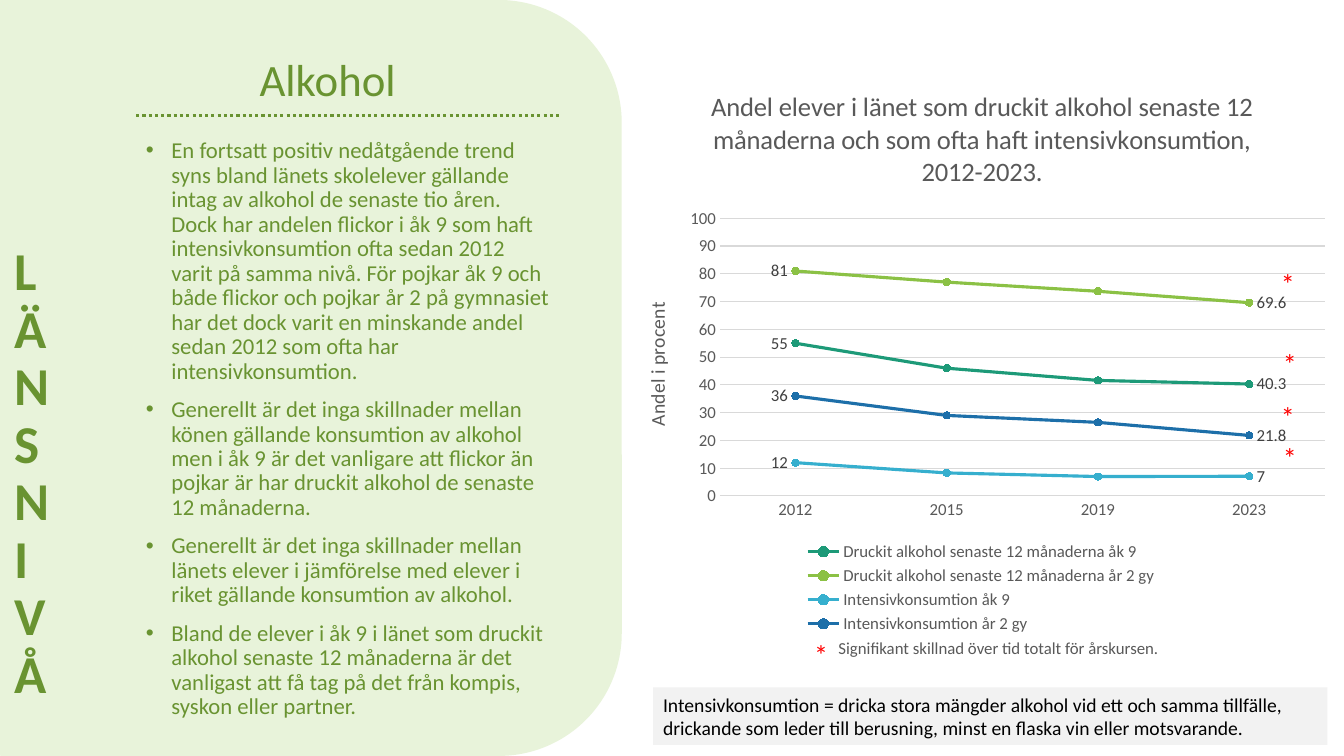
from dataclasses import dataclass

from lxml import etree
from pptx import Presentation
from pptx.chart import data as chart_data
from pptx.dml import color
from pptx.enum import chart as ch, dml, shapes, text
from pptx.oxml import ns
from pptx.util import Cm, Pt


@dataclass(frozen=True)
class Theme:
    font: str = "Calibri"
    green: str = "699331"
    pale_green: str = "E8F3DA"
    grey: str = "595959"
    label_grey: str = "404040"
    grid_grey: str = "D9D9D9"
    pale_grey: str = "F2F2F2"
    black: str = "000000"
    red: str = "FF0000"
    level: float = 38
    heading: float = 32
    star: float = 20
    chart_title: float = 19
    body: float = 16.2
    definition: float = 14
    axis_title: float = 14
    small: float = 12


@dataclass(frozen=True)
class Box:
    left: float
    top: float
    width: float = 0
    height: float = 0

    def cm(self) -> tuple:
        return Cm(self.left), Cm(self.top), Cm(self.width), Cm(self.height)


@dataclass(frozen=True)
class Trend:
    name: str
    values: tuple
    colour: str
    label_format: str = "General"


THEME = Theme()
CHART = Box(15.72, 1.68, 18.01, 14.4)
TRENDS = (
    Trend("Druckit alkohol senaste 12 månaderna åk 9", (55, 46, 41.6, 40.3), "1D9A78"),
    Trend("Druckit alkohol senaste 12 månaderna år 2 gy", (81, 77, 73.7, 69.6), "8BC145"),
    Trend("Intensivkonsumtion åk 9", (12, 8.3, 7, 7.1), "36AFCE", "0"),
    Trend("Intensivkonsumtion år 2 gy", (36, 29, 26.5, 21.8), "1D6FA9"),
)
FINDINGS = (
    "En fortsatt positiv nedåtgående trend syns bland länets skolelever gällande intag av alkohol "
    "de senaste tio åren. Dock har andelen flickor i åk 9 som haft intensivkonsumtion ofta sedan 2012 "
    "varit på samma nivå. För pojkar åk 9 och både flickor och pojkar år 2 på gymnasiet har det dock "
    "varit en minskande andel sedan 2012 som ofta har intensivkonsumtion.",
    "Generellt är det inga skillnader mellan könen gällande konsumtion av alkohol men i åk 9 är det "
    "vanligare att flickor än pojkar är har druckit alkohol de senaste 12 månaderna.",
    "Generellt är det inga skillnader mellan länets elever i jämförelse med elever i riket gällande "
    "konsumtion av alkohol.",
    "Bland de elever i åk 9 i länet som druckit alkohol senaste 12 månaderna är det vanligast att få "
    "tag på det från kompis, syskon eller partner.",
)
STARS = (
    Box(32.03, 6.58, 1.22, 1.75),
    Box(32.08, 8.61, 1.22, 1.75),
    Box(32.03, 9.93, 1.22, 1.75),
    Box(32.08, 10.97, 1.22, 1.75),
    Box(20.27, 15.93, 1.22, 1.45),
)


def rgb(value: str) -> color.RGBColor:
    return color.RGBColor.from_string(value)


def style(font, size: float, colour: str, bold: bool = False) -> None:
    font.name = THEME.font
    font.size = Pt(size)
    font.bold = bold
    font.color.rgb = rgb(colour)


def write(frame, words: tuple, size: float, colour: str, bold: bool = False) -> None:
    frame.word_wrap = True
    frame.text = "\n".join(words)
    for paragraph in frame.paragraphs:
        style(paragraph.font, size, colour, bold)


def add_text(slide, box: Box, words: tuple, size: float, colour: str, bold: bool = False):
    frame = slide.shapes.add_textbox(*box.cm()).text_frame
    write(frame, words, size, colour, bold)
    return frame


def add_panel(slide, preset, box: Box, fill: str):
    panel = slide.shapes.add_shape(preset, *box.cm())
    panel.shadow.inherit = False
    panel.fill.solid()
    panel.fill.fore_color.rgb = rgb(fill)
    panel.line.fill.background()
    return panel


def add_bullet(paragraph) -> None:
    paragraph.line_spacing = 0.9
    paragraph.space_before = Pt(10)
    properties = paragraph._p.get_or_add_pPr()
    properties.set("marL", str(Cm(0.64)))
    properties.set("indent", str(Cm(-0.64)))
    etree.SubElement(properties, ns.qn("a:buFont")).set("typeface", "Arial")
    etree.SubElement(properties, ns.qn("a:buChar")).set("char", "•")


def place(element, box: Box, inner: bool = False) -> None:
    layout = element.find(ns.qn("c:layout"))
    if layout is None:
        layout = etree.Element(ns.qn("c:layout"))
        before = [element.find(ns.qn("c:" + tag)) for tag in ("tx", "legendPos")]
        element.insert(1 if any(part is not None for part in before) else 0, layout)
    manual = etree.SubElement(layout, ns.qn("c:manualLayout"))
    settings = [("layoutTarget", "inner")] if inner else []
    settings += [("xMode", "edge"), ("yMode", "edge")]
    settings += [("x", box.left / CHART.width), ("y", box.top / CHART.height)]
    if box.width:
        settings += [("w", box.width / CHART.width), ("h", box.height / CHART.height)]
    for tag, value in settings:
        etree.SubElement(manual, ns.qn("c:" + tag)).set("val", str(value))


def draw_trend(series, trend: Trend) -> None:
    series.smooth = False
    series.format.line.color.rgb = rgb(trend.colour)
    series.format.line.width = Pt(2.25)
    series.marker.style = ch.XL_MARKER_STYLE.CIRCLE
    series.marker.size = 5
    for part in (series.marker.format.fill, series.marker.format.line.fill):
        part.solid()
        part.fore_color.rgb = rgb(trend.colour)
    series.data_labels.show_value = False
    ends = ((0, ch.XL_LABEL_POSITION.LEFT), (len(trend.values) - 1, ch.XL_LABEL_POSITION.RIGHT))
    for index, side in ends:
        label = series.points[index].data_label
        style(label.font, THEME.small, THEME.label_grey)
        label.position = side
        number = etree.Element(ns.qn("c:numFmt"), formatCode=trend.label_format, sourceLinked="0")
        label._dLbl.insert(1, number)


def add_trend_chart(slide) -> None:
    figures = chart_data.CategoryChartData()
    figures.categories = ["2012", "2015", "2019", "2023"]
    for trend in TRENDS:
        figures.add_series(trend.name, trend.values)
    chart = slide.shapes.add_chart(ch.XL_CHART_TYPE.LINE_MARKERS, *CHART.cm(), figures).chart
    style(chart.font, THEME.small, THEME.grey)
    headline = chart.chart_title.text_frame
    headline.text = ("Andel elever i länet som druckit alkohol senaste 12 månaderna "
                     "och som ofta haft intensivkonsumtion, 2012-2023.")
    style(headline.paragraphs[0].font, THEME.chart_title, THEME.grey)
    place(chart.chart_title._element, Box(2.08, 0.43))
    place(chart._chartSpace.chart.plotArea, Box(2.42, 3.82, 15.25, 7), inner=True)

    years, percent = chart.category_axis, chart.value_axis
    percent.minimum_scale, percent.maximum_scale, percent.major_unit = 0, 100, 10
    percent.axis_title.text_frame.text = "Andel i procent"
    style(percent.axis_title.text_frame.paragraphs[0].font, THEME.axis_title, THEME.grey)
    percent.format.line.fill.background()
    for axis in (years, percent):
        axis.major_tick_mark = ch.XL_TICK_MARK.NONE
        style(axis.tick_labels.font, THEME.small, THEME.grey)
    for line in (years.format.line, percent.major_gridlines.format.line):
        line.color.rgb = rgb(THEME.grid_grey)
        line.width = Pt(0.75)

    chart.has_legend = True
    chart.legend.position = ch.XL_LEGEND_POSITION.BOTTOM
    chart.legend.include_in_layout = False
    style(chart.legend.font, THEME.small, THEME.grey)
    place(chart.legend._element, Box(4.32, 11.87, 9.37, 2.53))
    for series, trend in zip(chart.plots[0].series, TRENDS):
        draw_trend(series, trend)


def main() -> None:
    deck = Presentation()
    deck.slide_width, deck.slide_height = Cm(33.87), Cm(19.05)
    slide = deck.slides.add_slide(deck.slide_layouts[6])
    add_panel(slide, shapes.MSO_SHAPE.ROUNDED_RECTANGLE, Box(-2.9, 0, 18.57, 19.05), THEME.pale_green)
    findings = add_text(slide, Box(3.43, 3.38, 10.66, 15.5), FINDINGS, THEME.body, THEME.green)
    for paragraph in findings.paragraphs:
        add_bullet(paragraph)
    add_trend_chart(slide)

    level = add_text(slide, Box(0.11, 1.19, 2.67, 16.69), ("LÄNSNIVÅ",), THEME.level, THEME.green, True)
    level.vertical_anchor = text.MSO_ANCHOR.BOTTOM
    level.paragraphs[0].line_spacing = 0.9
    level._txBody.bodyPr.set("vert", "wordArtVert")

    definition = add_panel(slide, shapes.MSO_SHAPE.RECTANGLE, Box(16.46, 17.32, 16.99, 1.45), THEME.pale_grey)
    write(definition.text_frame, (
        "Intensivkonsumtion = dricka stora mängder alkohol vid ett och samma tillfälle, "
        "drickande som leder till berusning, minst en flaska vin eller motsvarande.",
    ), THEME.definition, THEME.black)
    definition.text_frame.paragraphs[0].alignment = text.PP_ALIGN.LEFT

    heading = add_text(slide, Box(0.87, 1.02, 14.78, 2.11), ("Alkohol",), THEME.heading, THEME.green)
    heading.vertical_anchor = text.MSO_ANCHOR.MIDDLE
    heading.paragraphs[0].alignment = text.PP_ALIGN.CENTER
    heading.paragraphs[0].line_spacing = 0.9
    rule = slide.shapes.add_connector(shapes.MSO_CONNECTOR.STRAIGHT, Cm(3.43), Cm(2.9), Cm(14.12), Cm(2.9))
    rule.line.color.rgb = rgb(THEME.green)
    rule.line.width = Pt(2.25)
    rule.line.dash_style = dml.MSO_LINE.ROUND_DOT
    etree.SubElement(rule._element.spPr, ns.qn("a:effectLst"))

    for star in STARS:
        add_text(slide, star, ("*",), THEME.star, THEME.red)
    add_text(slide, Box(20.88, 15.95, 9.83, 0.76), ("Signifikant skillnad över tid totalt för årskursen.",),
             THEME.small, THEME.grey)
    deck.save("out.pptx")


if __name__ == "__main__":
    main()
